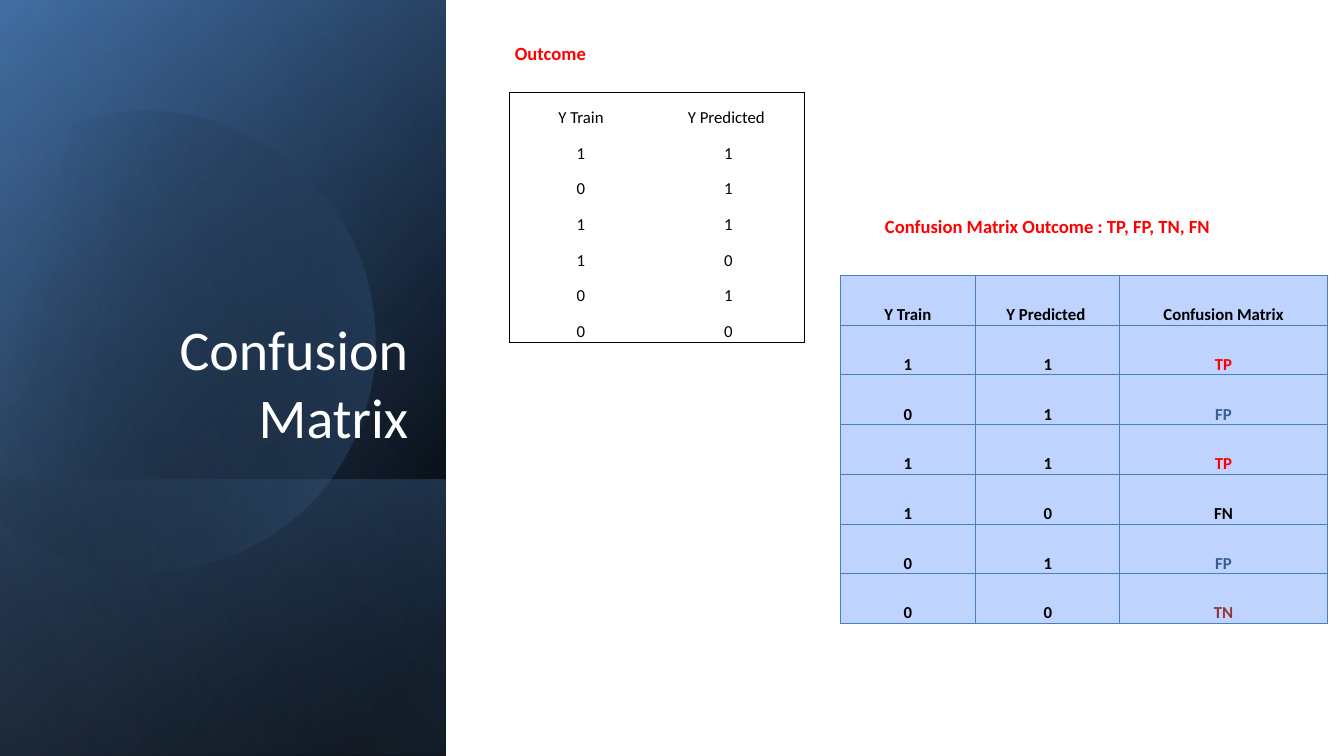
"""Build the Confusion Matrix slide."""
from math import cos, radians, sin

from lxml import etree
from pptx import Presentation
from pptx.dml.color import RGBColor
from pptx.enum.shapes import MSO_SHAPE
from pptx.enum.text import MSO_ANCHOR, PP_ALIGN
from pptx.oxml.ns import qn
from pptx.util import Pt

RECT = MSO_SHAPE.RECTANGLE
TOP, BOTTOM = MSO_ANCHOR.TOP, MSO_ANCHOR.BOTTOM
LEFT, CENTER, RIGHT = PP_ALIGN.LEFT, PP_ALIGN.CENTER, PP_ALIGN.RIGHT

COLORS = {
    "black": "000000", "white": "FFFFFF", "red": "FF0000", "navy": "376092",
    "blue": "4F81BD", "sky": "95B3D7", "maroon": "953735",
    "cell": "BFD3FF", "grid": "4B7EBC",
}
FONT = "Calibri"
SLIDE_W, SLIDE_H = 960, 540
PANEL_W = 318.5

OUTCOMES = [("1", "1", "TP"), ("0", "1", "FP"), ("1", "1", "TP"),
            ("1", "0", "FN"), ("0", "1", "FP"), ("0", "0", "TN")]
HEADER = ("Y Train", "Y Predicted ", "Confusion Matrix")
RESULT_COLORS = {"TP": "red", "FP": "navy", "TN": "maroon"}

# stops are (position %, colour, opacity %)
BACK_PANELS = [
    (540, [(8, "black", 100), (100, "navy", 100)], 50),
    (540, [(0, "black", 0), (99, "blue", 46)], 30),
    (197.5, [(2, "blue", 29), (100, "black", 30)], 130),
]
FRONT_PANEL = (540, [(0, "black", 0), (99, "sky", 11)], 120)

DISC_STOPS = [(29, "black", 0), (100, "blue", 43)]
DISC_TURN = 343.9
DISC_CENTER = (114.1, 240.8)
DISC_START = (107.3, 79.2)
DISC_CURVES = [
    [(177.1, 80.6), (241.2, 127.4), (261.4, 198)],
    [(286.6, 285.8), (236.2, 378.7), (149, 401.8)],
    [(94.3, 417.6), (38.2, 403.9), (-2.2, 370.1)],
    [(-10.8, 362.2)],
    [(-10.8, 126)],
    [(0, 115.9)],
    [(16.6, 102.2), (36, 92.2), (57.6, 85.7)],
    [(74.2, 81.4), (90.7, 79.2), DISC_START],
]

TEXTS = [
    ("Confusion Matrix", (46, 132.5, 245.5, 188.5), 0,
     {"size": Pt(40), "bold": False}, "white",
     {"alignment": RIGHT}, BOTTOM),
    ("Confusion Matrix Outcome : TP, FP, TN, FN", (625, 149.8, 281, 24), None,
     {"size": Pt(13.3), "bold": True}, "red",
     {"alignment": LEFT, "space_after": Pt(6)}, TOP),
    ("Outcome", (360.7, 26.6, 281, 24), None,
     {"size": Pt(13.3), "bold": True}, "red",
     {"alignment": LEFT, "space_after": Pt(6)}, TOP),
]
TABLES = [
    {"at": (364, 66), "cols": (102, 108.5), "row": 25.5, "bold": False,
     "fill": None, "line": "black", "inner": False},
    {"at": (600, 196.8), "cols": (97, 103, 148), "row": 35.5, "bold": True,
     "fill": "cell", "line": "grid", "inner": True},
]


def rgb(name):
    return RGBColor.from_string(COLORS[name])


def apply(obj, values):
    for key, value in values.items():
        setattr(obj, key, value)


def write(tf, text, font, color, para):
    p = tf.paragraphs[0]
    apply(p, para)
    r = p.add_run()
    r.text = text
    apply(r.font, {"name": FONT, **font})
    r.font.color.rgb = rgb(color)


def paint(sp, stops, angle):
    sp.shadow.inherit = False
    sp.line.fill.background()
    sp.fill.gradient()
    sp.fill.gradient_angle = 360 - angle
    for stop, (position, color, _) in zip(sp.fill.gradient_stops, stops):
        stop.position = position / 100
        stop.color.rgb = rgb(color)
    colors = sp._element.spPr.iter(qn("a:srgbClr"))
    for node, (_, _, opacity) in zip(list(colors), stops):
        etree.SubElement(node, qn("a:alpha")).set("val", str(opacity * 1000))


def add_panel(s, height, stops, angle):
    x = (PANEL_W - height) / 2
    y = SLIDE_H - height / 2 - PANEL_W / 2
    sp = s.shapes.add_shape(RECT, Pt(x), Pt(y), Pt(height), Pt(PANEL_W))
    sp.rotation = 90
    sp._element.spPr.find(qn("a:xfrm")).set("flipH", "1")
    paint(sp, stops, angle)


def bezier(points, steps=16):
    for i in range(1, steps + 1):
        t = i / steps
        weights = ((1 - t) ** 3, 3 * t * (1 - t) ** 2, 3 * t * t * (1 - t), t ** 3)
        yield tuple(sum(w * pt[axis] for w, pt in zip(weights, points))
                    for axis in (0, 1))


def unturn(point):
    a = radians(-DISC_TURN)
    cx, cy = DISC_CENTER
    dx, dy = point[0] - cx, point[1] - cy
    return (Pt(cx + dx * cos(a) - dy * sin(a)),
            Pt(cy + dx * sin(a) + dy * cos(a)))


def add_disc(s):
    outline = [DISC_START]
    for curve in DISC_CURVES:
        outline += bezier([outline[-1], *curve]) if len(curve) == 3 else curve
    start, *rest = [unturn(point) for point in outline]
    builder = s.shapes.build_freeform(*start)
    builder.add_line_segments(rest, close=True)
    sp = builder.convert_to_shape()
    sp.rotation = DISC_TURN
    paint(sp, DISC_STOPS, 30)


def add_border(cell, side, color):
    ln = etree.SubElement(cell._tc.get_or_add_tcPr(), qn("a:ln" + side), w=str(Pt(0.75)))
    if color:
        fill = etree.SubElement(ln, qn("a:solidFill"))
        etree.SubElement(fill, qn("a:srgbClr"), val=COLORS[color])
    else:
        etree.SubElement(ln, qn("a:noFill"))


def add_matrix(s, at, cols, row, bold, fill, line, inner):
    rows = [HEADER, *OUTCOMES]
    last_row, last_col = len(rows) - 1, len(cols) - 1
    size = (sum(cols), row * len(rows))
    table = s.shapes.add_table(len(rows), len(cols), *map(Pt, at + size)).table
    apply(table, {"first_row": False, "horz_banding": False})
    for column, width in zip(table.columns, cols):
        column.width = Pt(width)
    for i, values in enumerate(rows):
        table.rows[i].height = Pt(row)
        for j, text in enumerate(values[:len(cols)]):
            cell = table.cell(i, j)
            apply(cell, {"margin_left": Pt(0.7), "margin_right": Pt(0.7),
                         "margin_top": Pt(0.7), "margin_bottom": 0,
                         "vertical_anchor": BOTTOM})
            outer = {"L": j == 0, "R": j == last_col,
                     "T": i == 0, "B": i == last_row}
            for side, at_edge in outer.items():
                add_border(cell, side, line if inner or at_edge else None)
            if fill:
                cell.fill.solid()
                cell.fill.fore_color.rgb = rgb(fill)
            else:
                cell.fill.background()
            write(cell.text_frame, text, {"size": Pt(12), "bold": bold},
                  RESULT_COLORS.get(text, "black"), {"alignment": CENTER})


def add_text(s, text, box, inset, font, color, para, anchor):
    tf = s.shapes.add_textbox(*map(Pt, box)).text_frame
    apply(tf, {"word_wrap": True, "vertical_anchor": anchor})
    if inset is not None:
        apply(tf, {f"margin_{side}": Pt(inset)
                   for side in ("left", "right", "top", "bottom")})
    write(tf, text, font, color, para)


def main():
    prs = Presentation()
    apply(prs, {"slide_width": Pt(SLIDE_W), "slide_height": Pt(SLIDE_H)})
    s = prs.slides.add_slide(prs.slide_layouts[6])
    for panel in BACK_PANELS:
        add_panel(s, *panel)
    add_disc(s)
    add_panel(s, *FRONT_PANEL)
    title, *labels = TEXTS
    add_text(s, *title)
    for matrix in TABLES:
        add_matrix(s, **matrix)
    for label in labels:
        add_text(s, *label)
    prs.save("out.pptx")


if __name__ == "__main__":
    main()
